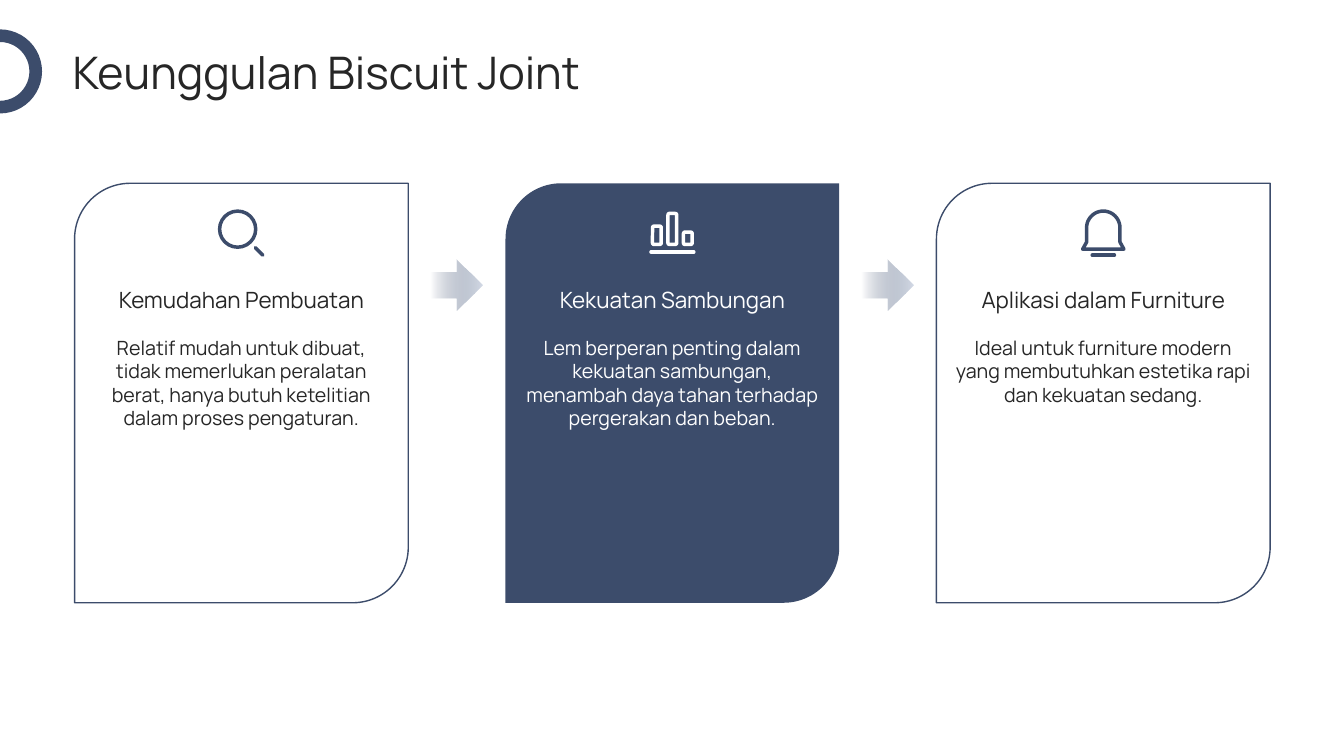
from math import cos, pi, sin
from lxml.etree import SubElement
from pptx import Presentation
from pptx.dml.color import RGBColor
from pptx.enum.shapes import MSO_CONNECTOR, MSO_SHAPE
from pptx.enum.text import MSO_ANCHOR, MSO_AUTO_SIZE, PP_ALIGN
from pptx.oxml.ns import qn
from pptx.util import Cm, Pt


def ink(code):
    return RGBColor.from_string(code)


def write(box, text, size, tone, anchor, align):
    frame = box.text_frame
    frame.text = text
    look = {
        "word_wrap": True, "auto_size": MSO_AUTO_SIZE.NONE, "vertical_anchor": anchor,
        "margin_left": 0, "margin_top": 0, "margin_right": 0, "margin_bottom": 0,
    }
    for name, value in look.items():
        setattr(frame, name, value)
    para = frame.paragraphs[0]
    para.alignment = align
    for name, value in {"name": "Manrope", "size": Pt(size), "bold": False}.items():
        setattr(para.font, name, value)
    para.font.color.rgb = ink(tone)


NAVY, WHITE, DARK = "3C4C6B", "FFFFFF", "262626"
LEFT, STEP, TOP, WIDE, HIGH = 1.88, 10.86, 4.62, 8.41, 10.57

deck = Presentation()
deck.slide_width, deck.slide_height = Cm(33.87), Cm(19.05)
slide = deck.slides.add_slide(deck.slide_layouts[5])
shapes = slide.shapes

title = shapes.title
place = {"left": 1.83, "top": 1.2, "width": 30.18, "height": 1.2}
for name, value in place.items():
    setattr(title, name, Cm(value))
write(title, "Keunggulan Biscuit Joint", 32, DARK, MSO_ANCHOR.MIDDLE, PP_ALIGN.LEFT)

ring = shapes.add_shape(MSO_SHAPE.OVAL, Cm(-0.9), Cm(0.9), Cm(1.8), Cm(1.8))
ring.shadow.inherit = False
ring.fill.background()
ring.line.color.rgb = ink(NAVY)
ring.line.width = Pt(9)

cards = [
    ("Kemudahan Pembuatan",
     "Relatif mudah untuk dibuat, tidak memerlukan peralatan berat, "
     "hanya butuh ketelitian dalam proses pengaturan.", WHITE, DARK),
    ("Kekuatan Sambungan",
     "Lem berperan penting dalam kekuatan sambungan, "
     "menambah daya tahan terhadap pergerakan dan beban.", NAVY, WHITE),
    ("Aplikasi dalam Furniture",
     "Ideal untuk furniture modern yang membutuhkan estetika rapi "
     "dan kekuatan sedang.", WHITE, DARK),
]
for i, (head, body, back, tone) in enumerate(cards):
    x = LEFT + i * STEP
    card = shapes.add_shape(MSO_SHAPE.ROUND_2_DIAG_RECTANGLE,
                            Cm(x), Cm(TOP), Cm(WIDE), Cm(HIGH))
    card.shadow.inherit = False
    card.fill.solid()
    card.fill.fore_color.rgb = ink(back)
    if back == WHITE:
        card.line.color.rgb = ink(NAVY)
        card.line.width = Pt(1)
    else:
        card.line.fill.background()
    for text, size, y, tall, anchor in [(head, 16, 6.83, 1.45, MSO_ANCHOR.MIDDLE),
                                        (body, 14, 8.46, 6.53, MSO_ANCHOR.TOP)]:
        box = shapes.add_textbox(Cm(x + 0.47), Cm(y), Cm(7.47), Cm(tall))
        write(box, text, size, tone, anchor, PP_ALIGN.CENTER)

for i in range(2):
    arrow = shapes.add_shape(MSO_SHAPE.RIGHT_ARROW, Cm(LEFT + i * STEP + 8.97),
                             Cm(6.53), Cm(1.3), Cm(1.3))
    arrow.shadow.inherit = False
    arrow.line.fill.background()
    arrow.fill.gradient()
    arrow.fill.gradient_angle = 0
    for stop, code in zip(arrow.fill.gradient_stops, [NAVY, "D3DAE6"]):
        stop.color.rgb = ink(code)
    first = arrow._element.xpath(".//a:gs/a:srgbClr")[0]
    SubElement(first, qn("a:alpha"), val="0")

lens, chart, bell = [shapes.add_group_shape().shapes for _ in cards]
mids = [LEFT + i * STEP + WIDE / 2 for i in range(3)]

glass = lens.add_shape(MSO_SHAPE.OVAL, Cm(mids[0] - 0.55), Cm(5.32), Cm(0.91), Cm(0.91))
parts = [(glass, NAVY)]
for i, y in enumerate([5.7, 5.38, 5.85]):
    bar = chart.add_shape(MSO_SHAPE.ROUNDED_RECTANGLE, Cm(mids[1] - 0.5 + i * 0.39),
                          Cm(y), Cm(0.22), Cm(6.16 - y))
    parts.append((bar, WHITE))

dome = [(0.42 * cos(pi - k * pi / 24), 5.74 - 0.42 * sin(k * pi / 24)) for k in range(25)]
rim = [(0.42, 6.1), (0.52, 6.28), (-0.52, 6.28), (-0.42, 6.1)]
dots = [(Cm(mids[2] + x), Cm(y)) for x, y in dome + rim]
path = bell.build_freeform(*dots[0])
path.add_line_segments(dots[1:], close=True)
parts.append((path.convert_to_shape(), NAVY))

for part, tone in parts:
    part.shadow.inherit = False
    part.fill.background()

strokes = [(lens, mids[0], 0.35, 6.24, 0.54, 6.43, NAVY),
           (chart, mids[1], -0.54, 6.35, 0.54, 6.35, WHITE),
           (bell, mids[2], -0.28, 6.43, 0.28, 6.43, NAVY)]
for icon, mid, x1, y1, x2, y2, tone in strokes:
    line = icon.add_connector(MSO_CONNECTOR.STRAIGHT,
                              Cm(mid + x1), Cm(y1), Cm(mid + x2), Cm(y2))
    SubElement(line._element.spPr, qn("a:effectLst"))
    parts.append((line, tone))

for part, tone in parts:
    part.line.color.rgb = ink(tone)
    part.line.width = Pt(2.5)
    edge = part.line._get_or_add_ln()
    edge.set("cap", "rnd")
    SubElement(edge, qn("a:round"))

deck.save("out.pptx")
